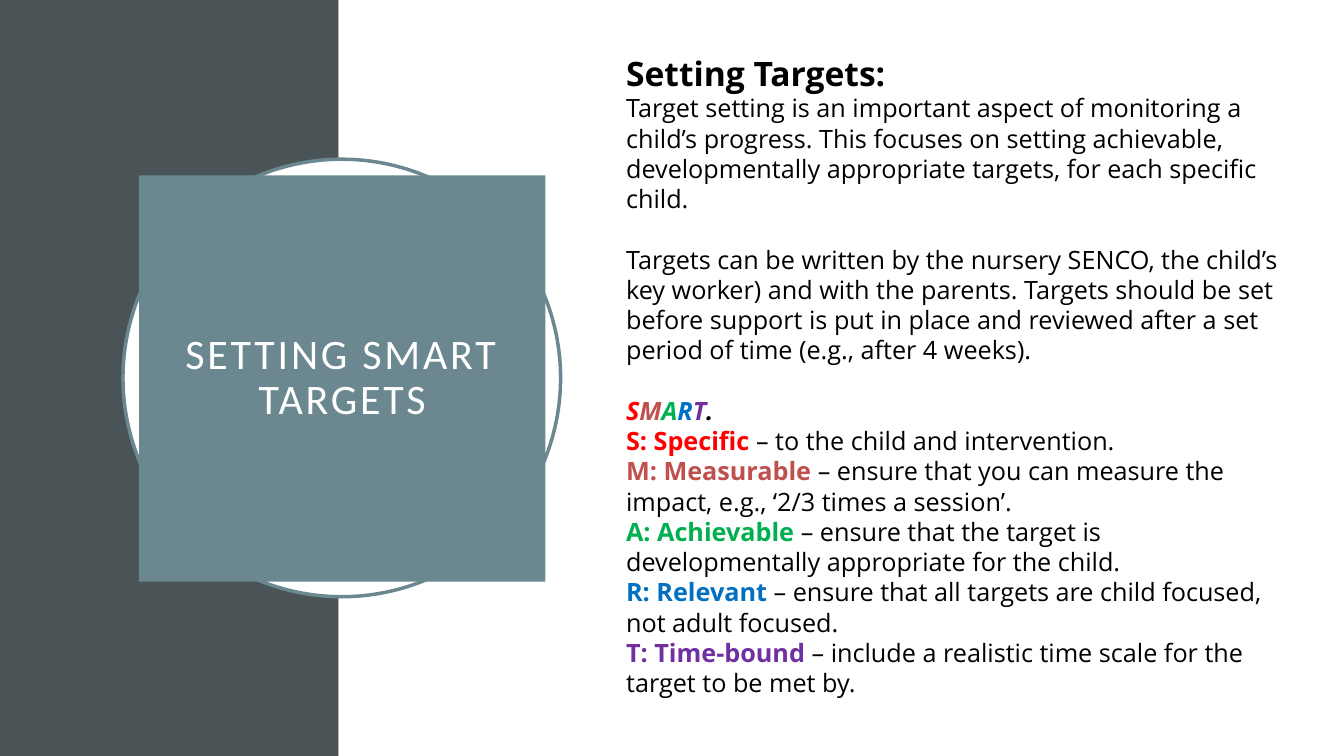
from pptx import Presentation
from pptx.dml.color import RGBColor
from pptx.enum.shapes import MSO_SHAPE
from pptx.enum.text import MSO_ANCHOR, MSO_AUTO_SIZE, PP_ALIGN
from pptx.oxml.ns import qn
from pptx.util import Inches, Pt

RECT, OVAL = MSO_SHAPE.RECTANGLE, MSO_SHAPE.OVAL
TOP, MIDDLE = MSO_ANCHOR.TOP, MSO_ANCHOR.MIDDLE
LEFT, CENTER = PP_ALIGN.LEFT, PP_ALIGN.CENTER
NO_FIT = MSO_AUTO_SIZE.NONE

COLORS = {
    "panel": "4A5356", "teal": "6B8891", "white": "FFFFFF", "black": "000000",
    "S": "FF0000", "M": "C0504D", "A": "00B050", "R": "0070C0", "T": "7030A0",
}
TITLE_FONT, BODY_FONT = "Calibri", "Open Sans"
HEAD_SIZE, BODY_SIZE, GAP = 24, 18, 21.6

INTRO = [
    "Target setting is an important aspect of monitoring a child’s progress. "
    "This focuses on setting achievable, developmentally appropriate targets, "
    "for each specific child.",
    "Targets can be written by the nursery SENCO, the child’s key worker) and "
    "with the parents. Targets should be set before support is put in place "
    "and reviewed after a set period of time (e.g., after 4 weeks).",
]
SMART = [
    ("Specific", "to the child and intervention."),
    ("Measurable", "ensure that you can measure the impact, e.g., "
                   "‘2/3 times a session’."),
    ("Achievable", "ensure that the target is developmentally appropriate "
                   "for the child."),
    ("Relevant", "ensure that all targets are child focused, "
                 "not adult focused."),
    ("Time-bound", "include a realistic time scale for the target "
                   "to be met by."),
]


def rgb(name):
    return RGBColor.from_string(COLORS[name])


def place(sp, left, top, width, height):
    sp.left, sp.top = Inches(left), Inches(top)
    sp.width, sp.height = Inches(width), Inches(height)


def add_block(s, kind, box, fill, line=None):
    sp = s.shapes.add_shape(kind, *map(Inches, box))
    sp.shadow.inherit = False
    sp.fill.solid()
    sp.fill.fore_color.rgb = rgb(fill)
    if line:
        sp.line.color.rgb = rgb(line)
        sp.line.width = Pt(2.5)
    else:
        sp.line.fill.background()


def set_frame(tf, anchor, side, top):
    tf.word_wrap = True
    tf.auto_size = NO_FIT
    tf.vertical_anchor = anchor
    tf.margin_left = tf.margin_right = Inches(side)
    tf.margin_top = tf.margin_bottom = Inches(top)


def add_run(p, text, size, font, color, bold=False, italic=False):
    r = p.add_run()
    r.text = text
    r.font.size, r.font.name = Pt(size), font
    r.font.bold, r.font.italic = bold, italic
    r.font.color.rgb = rgb(color)
    return r


def add_body_paragraph(tf, runs, size=BODY_SIZE, gap=0):
    """Add unbulleted text from (text, color, bold, italic) runs."""
    p = tf.paragraphs[0]
    if p.runs:
        p = tf.add_paragraph()
    p.alignment, p.line_spacing = LEFT, 1.0
    p.space_before, p.space_after = Pt(gap), Pt(0)
    pPr = p._p.get_or_add_pPr()
    pPr.set("marL", "0")
    pPr.set("indent", "0")
    pPr.append(pPr.makeelement(qn("a:buNone"), {}))
    for text, color, bold, italic in runs:
        add_run(p, text, size, BODY_FONT, color, bold, italic)


def fill_title(title):
    place(title, 1.38, 1.74, 4.03, 4.03)
    title.fill.solid()
    title.fill.fore_color.rgb = rgb("teal")
    tf = title.text_frame
    set_frame(tf, MIDDLE, 0.2, 0.2)
    p = tf.paragraphs[0]
    p.alignment, p.line_spacing = CENTER, 0.9
    r = add_run(p, "SETTING SMART TARGETS", 30, TITLE_FONT, "white")
    r.font._element.set("spc", "200")


def fill_body(body):
    place(body, 6.11, 0.47, 6.79, 6.56)
    tf = body.text_frame
    set_frame(tf, TOP, 0.1, 0.05)
    add_body_paragraph(tf, [("Setting Targets:", "black", True, False)], HEAD_SIZE)
    for i, text in enumerate(INTRO):
        add_body_paragraph(tf, [(text, "black", False, False)], gap=i * GAP)

    # Coloured acronym, then one paragraph per letter
    letters = [(word[0], word[0], True, True) for word, _ in SMART]
    add_body_paragraph(tf, letters + [(".", "black", True, True)], gap=GAP)
    for word, meaning in SMART:
        add_body_paragraph(tf, [
            (f"{word[0]}: {word} ", word[0], True, False),
            (f"– {meaning}", "black", False, False),
        ])


def main():
    prs = Presentation()
    prs.slide_width, prs.slide_height = Inches(13.33), Inches(7.5)
    s = prs.slides.add_slide(prs.slide_layouts[1])
    title, body = s.placeholders

    # Background panels and ring
    add_block(s, RECT, (0, 0, 3.36, 7.5), "panel")
    add_block(s, RECT, (3.36, 0, 9.97, 7.5), "white")
    add_block(s, OVAL, (1.22, 1.58, 4.34, 4.34), "white", "teal")

    # Text goes in front of the panels
    for sp in (title, body):
        s.shapes._spTree.append(sp._element)
    fill_title(title)
    fill_body(body)
    prs.save("out.pptx")


if __name__ == "__main__":
    main()
